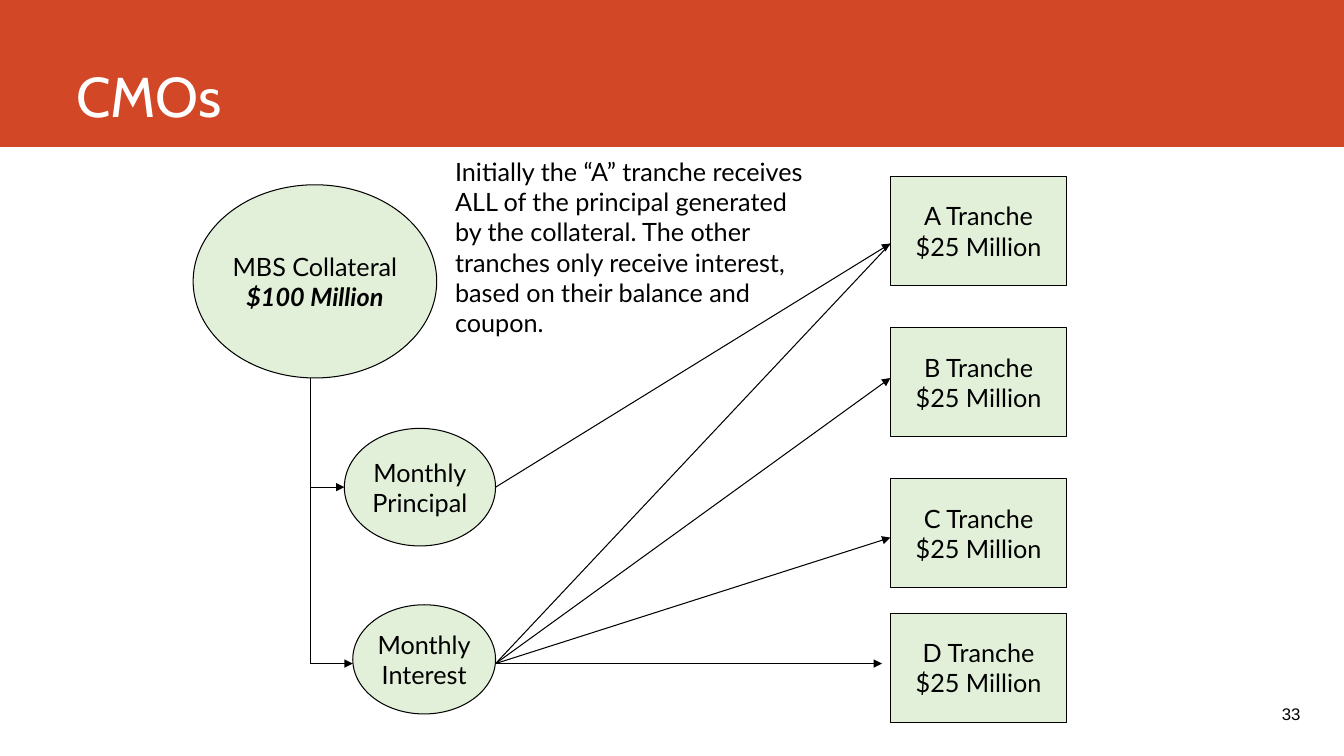
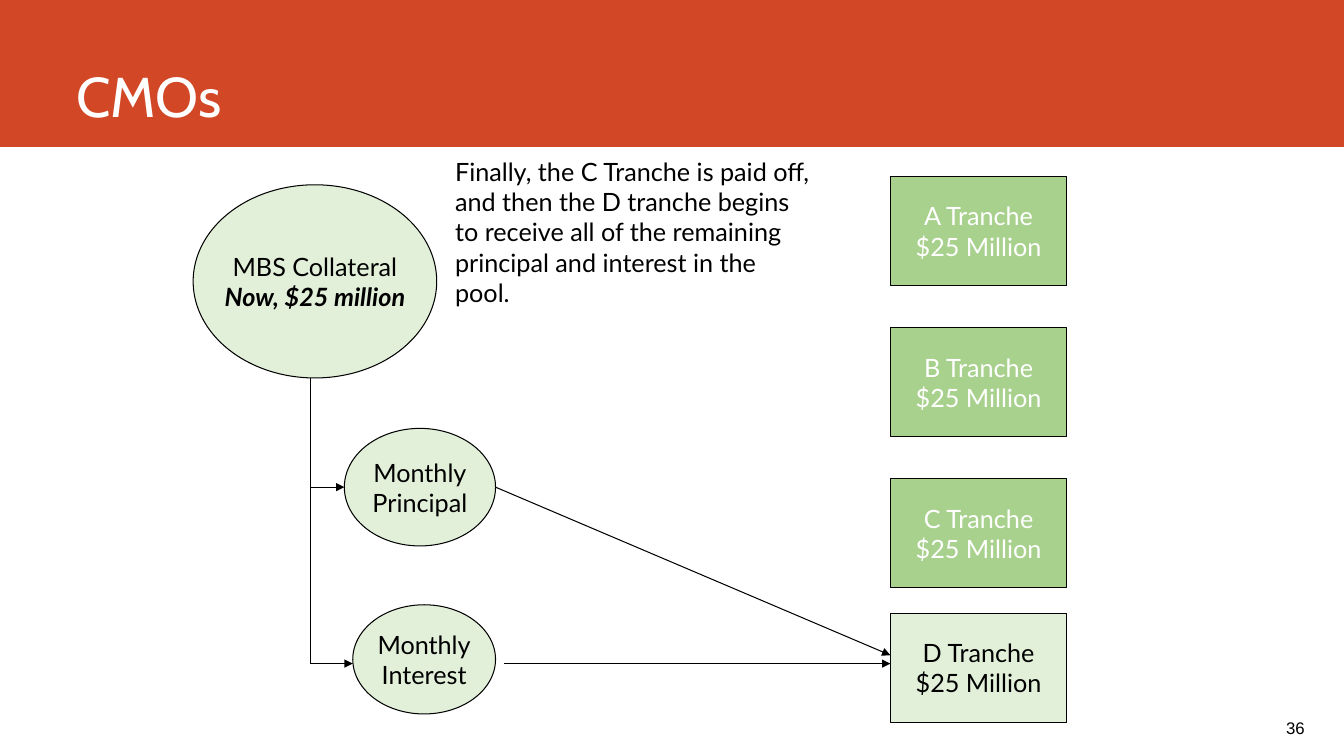
from dataclasses import dataclass

from lxml import etree
from pptx import Presentation
from pptx.dml.color import RGBColor
from pptx.enum.shapes import MSO_CONNECTOR, MSO_SHAPE
from pptx.enum.text import MSO_ANCHOR, PP_ALIGN
from pptx.oxml.ns import qn
from pptx.util import Pt

RECTANGLE, OVAL = MSO_SHAPE.RECTANGLE, MSO_SHAPE.OVAL
STRAIGHT = MSO_CONNECTOR.STRAIGHT
MIDDLE, BOTTOM = MSO_ANCHOR.MIDDLE, MSO_ANCHOR.BOTTOM
LEFT, CENTER, RIGHT = PP_ALIGN.LEFT, PP_ALIGN.CENTER, PP_ALIGN.RIGHT
PX = 9525  # EMU per px, 96 px to the inch
TITLE_ONLY = 5


@dataclass(frozen=True)
class Theme:
    band: str = "D24726"
    open_fill: str = "E2F0D9"
    paid_fill: str = "A9D18E"
    ink: str = "000000"
    white: str = "FFFFFF"
    title_font: str = "Cabin"
    body_font: str = "Lato"
    number_font: str = "Arial"
    title_size: int = 40
    body_size: int = 18
    number_size: int = 12
    line_width: float = 0.75


THEME = Theme()

# Boxes are left, top, width, height in px
SLIDE_SIZE = (1280, 720)
BAND_BOX = (0, 0, 1280, 140)
TITLE_BOX = (63, 0, 1129, 127)
COLLATERAL_BOX = (184, 176, 232, 184)
PRINCIPAL_BOX = (328, 408, 144, 112)
INTEREST_BOX = (336, 576, 136, 104)
NOTE_LEFT, NOTE_TOP, NOTE_WIDTH = 424, 144, 360
NUMBER_SIZE = (224, 26)

TRANCHE_LEFT, TRANCHE_WIDTH, TRANCHE_HEIGHT = 848, 168, 104
TRANCHE_TOPS = {"A": 168, "B": 312, "C": 456, "D": 584}
TRANCHE_AMOUNT = "$25 Million"

TRUNK_X = 296
PRINCIPAL_Y, INTEREST_Y = 464, 632
FLOW_LEFT = PRINCIPAL_BOX[0] + PRINCIPAL_BOX[2]

# Lines are start, end, arrowhead
TRUNK_LINES = [
    ((TRUNK_X, 360), (TRUNK_X, INTEREST_Y), False),
    ((TRUNK_X, INTEREST_Y), (INTEREST_BOX[0], INTEREST_Y), True),
    ((TRUNK_X, PRINCIPAL_Y), (PRINCIPAL_BOX[0], PRINCIPAL_Y), True),
]
PRINCIPAL_START = (FLOW_LEFT, PRINCIPAL_Y)
INTEREST_START = (FLOW_LEFT, INTEREST_Y)

SLIDES = [
    {
        "title": "CMOs",
        "number": "33",
        "number_at": (1024, 667),
        "balance": "$100 Million",
        "paid": "",
        "note": "Initially the “A” tranche receives ALL of the principal "
                "generated by the collateral. The other tranches only receive "
                "interest, based on their balance and coupon.",
        "note_height": 182,
        "flows": [
            (PRINCIPAL_START, (TRANCHE_LEFT, 232), True),
            (INTEREST_START, (TRANCHE_LEFT, 232), False),
            (INTEREST_START, (TRANCHE_LEFT, 360), True),
            (INTEREST_START, (TRANCHE_LEFT, 512), True),
            (INTEREST_START, (TRANCHE_LEFT - 8, INTEREST_Y), True),
        ],
    },
    {
        "title": "CMOs",
        "number": "36",
        "number_at": (1028, 680),
        "balance": "Now, $25 million",
        "paid": "ABC",
        "note": "Finally, the C Tranche is paid off, and then the D tranche "
                "begins to receive all of the remaining principal and "
                "interest in the pool.",
        "note_height": 154,
        "flows": [
            (PRINCIPAL_START, (TRANCHE_LEFT, 624), True),
            ((FLOW_LEFT + 8, INTEREST_Y), (TRANCHE_LEFT, INTEREST_Y), True),
        ],
    },
]


def to_emu(lengths):
    return [length * PX for length in lengths]


def color(name):
    return RGBColor.from_string(name)


def format_paragraph(paragraph, font_name, size, ink, alignment):
    paragraph.alignment = alignment
    font = paragraph.font
    font.name, font.size = font_name, Pt(size)
    font.color.rgb = color(ink)


def write_body(text_frame, lines, ink=THEME.ink, alignment=CENTER):
    """Write one paragraph per line; a newline inside a line is a line break."""
    for index, line in enumerate(lines):
        paragraph = text_frame.add_paragraph() if index else text_frame.paragraphs[0]
        paragraph.text = line
        format_paragraph(paragraph, THEME.body_font, THEME.body_size, ink, alignment)


def add_node(slide, kind, box, lines, fill=THEME.open_fill, ink=THEME.ink):
    shape = slide.shapes.add_shape(kind, *to_emu(box))
    shape.shadow.inherit = False
    shape.fill.solid()
    shape.fill.fore_color.rgb = color(fill)
    shape.line.color.rgb = color(THEME.ink)
    shape.line.width = Pt(THEME.line_width)
    text_frame = shape.text_frame
    text_frame.word_wrap = False
    text_frame.vertical_anchor = MIDDLE
    write_body(text_frame, lines, ink)
    return shape


def add_line(slide, start, end, arrow):
    line = slide.shapes.add_connector(STRAIGHT, *to_emu(start + end))
    line.line.color.rgb = color(THEME.ink)
    line.line.width = Pt(THEME.line_width)
    if arrow:
        etree.SubElement(line.line._get_or_add_ln(), qn("a:tailEnd"), type="triangle")
    etree.SubElement(line._element.spPr, qn("a:effectLst"))


def add_text_box(slide, box):
    text_frame = slide.shapes.add_textbox(*to_emu(box)).text_frame
    text_frame.word_wrap = True
    return text_frame


def prepare_layout(layout, slide):
    """Give the layout its title place and the band, which is drawn on a slide and moved."""
    title = layout.placeholders[0]
    title.left, title.top, title.width, title.height = to_emu(TITLE_BOX)
    band = slide.shapes.add_shape(RECTANGLE, *to_emu(BAND_BOX))
    band.shadow.inherit = False
    band.fill.solid()
    band.fill.fore_color.rgb = color(THEME.band)
    band.line.fill.background()
    layout.shapes._spTree.insert(2, band._element)


def add_title(slide, text):
    title = slide.shapes.title
    title.text = text
    title.text_frame.vertical_anchor = BOTTOM
    format_paragraph(title.text_frame.paragraphs[0], THEME.title_font,
                     THEME.title_size, THEME.white, LEFT)


def add_number(slide, text, position):
    text_frame = add_text_box(slide, position + NUMBER_SIZE)
    text_frame.vertical_anchor = MIDDLE
    paragraph = text_frame.paragraphs[0]
    paragraph.text = text
    format_paragraph(paragraph, THEME.number_font, THEME.number_size, THEME.ink, RIGHT)


def add_nodes(slide, content):
    collateral = add_node(slide, OVAL, COLLATERAL_BOX,
                          ["MBS Collateral", content["balance"]])
    balance_font = collateral.text_frame.paragraphs[1].font
    balance_font.bold = balance_font.italic = True
    for name, top in TRANCHE_TOPS.items():
        paid = name in content["paid"]
        add_node(slide, RECTANGLE, (TRANCHE_LEFT, top, TRANCHE_WIDTH, TRANCHE_HEIGHT),
                 [f"{name} Tranche", TRANCHE_AMOUNT],
                 THEME.paid_fill if paid else THEME.open_fill,
                 THEME.white if paid else THEME.ink)
    add_node(slide, OVAL, PRINCIPAL_BOX, ["Monthly\nPrincipal"])
    add_node(slide, OVAL, INTEREST_BOX, ["Monthly\nInterest"])


def build_slide(slide, content):
    add_title(slide, content["title"])
    add_number(slide, content["number"], content["number_at"])
    add_nodes(slide, content)
    for start, end, arrow in TRUNK_LINES + content["flows"]:
        add_line(slide, start, end, arrow)
    note = add_text_box(slide, (NOTE_LEFT, NOTE_TOP, NOTE_WIDTH, content["note_height"]))
    write_body(note, [content["note"]], alignment=LEFT)


def main():
    presentation = Presentation()
    presentation.slide_width, presentation.slide_height = to_emu(SLIDE_SIZE)
    layout = presentation.slide_layouts[TITLE_ONLY]
    slides = [presentation.slides.add_slide(layout) for _ in SLIDES]
    prepare_layout(layout, slides[0])
    for slide, content in zip(slides, SLIDES):
        build_slide(slide, content)
    presentation.save("out.pptx")


if __name__ == "__main__":
    main()
